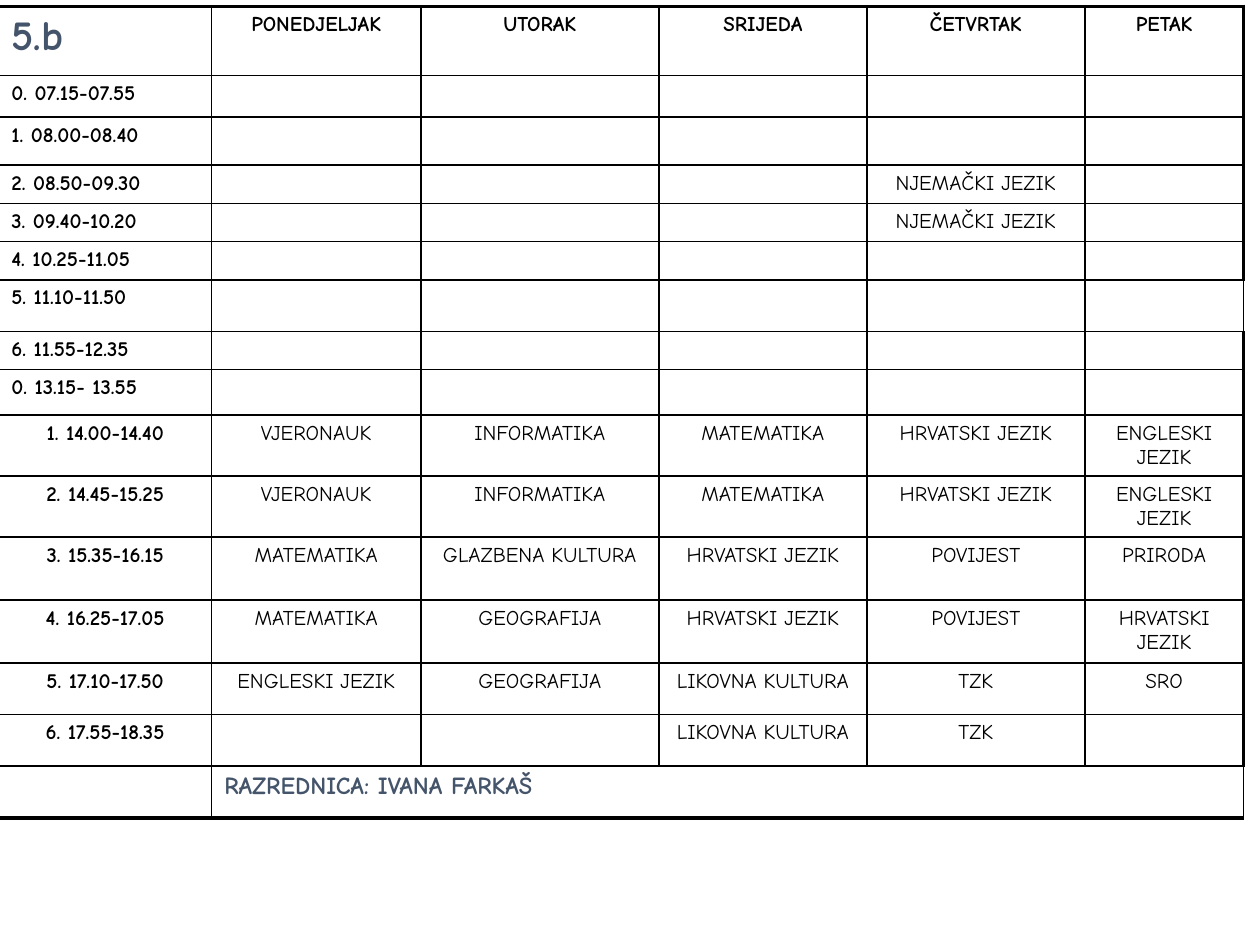
from lxml import etree
from pptx import Presentation
from pptx.dml.color import RGBColor
from pptx.enum.text import PP_ALIGN
from pptx.oxml.ns import qn
from pptx.util import Inches, Pt

LEFT, CENTER = PP_ALIGN.LEFT, PP_ALIGN.CENTER
BLACK = RGBColor(0x00, 0x00, 0x00)
SLATE = RGBColor(0x44, 0x54, 0x6A)
FONT = "Comic Neue"
THIN, THICK = 1, 2.25

CLASS_NAME = "5.b"
DAYS = ["PONEDJELJAK", "UTORAK", "SRIJEDA", "ČETVRTAK", "PETAK"]
FREE_DAY = [""] * 5
MORNING = [
    ("0. 07.15-07.55", FREE_DAY),
    ("1. 08.00-08.40", FREE_DAY),
    ("2. 08.50-09.30", ["", "", "", "NJEMAČKI JEZIK", ""]),
    ("3. 09.40-10.20", ["", "", "", "NJEMAČKI JEZIK", ""]),
    ("4. 10.25-11.05", FREE_DAY),
    ("5. 11.10-11.50", FREE_DAY),
    ("6. 11.55-12.35", FREE_DAY),
    ("0. 13.15- 13.55", FREE_DAY),
]
AFTERNOON = [
    ("1. 14.00-14.40", ["VJERONAUK", "INFORMATIKA", "MATEMATIKA", "HRVATSKI JEZIK", "ENGLESKI JEZIK"]),
    ("2. 14.45-15.25", ["VJERONAUK", "INFORMATIKA", "MATEMATIKA", "HRVATSKI JEZIK", "ENGLESKI JEZIK"]),
    ("3. 15.35-16.15", ["MATEMATIKA", "GLAZBENA KULTURA", "HRVATSKI JEZIK", "POVIJEST", "PRIRODA"]),
    ("4. 16.25-17.05", ["MATEMATIKA", "GEOGRAFIJA", "HRVATSKI JEZIK", "POVIJEST", "HRVATSKI JEZIK"]),
    ("5. 17.10-17.50", ["ENGLESKI JEZIK", "GEOGRAFIJA", "LIKOVNA KULTURA", "TZK", "SRO"]),
    ("6. 17.55-18.35", ["", "", "LIKOVNA KULTURA", "TZK", ""]),
]
CLASS_TEACHER = "RAZREDNICA: IVANA FARKAŠ"

COLUMN_WIDTHS = [1.69, 1.66, 1.89, 1.65, 1.73, 1.26]
ROW_HEIGHTS = [0.55, 0.33, 0.38, 0.29, 0.29, 0.29, 0.41, 0.29, 0.36,
               0.48, 0.48, 0.5, 0.5, 0.41, 0.41, 0.41]
LAST_ROW, LAST_COLUMN = len(ROW_HEIGHTS) - 1, len(COLUMN_WIDTHS) - 1
THIN_EDGE_ROW = 6


def write(cell, text, size=12, color=BLACK, bold=False, align=CENTER):
    paragraph = cell.text_frame.paragraphs[0]
    paragraph.alignment = align
    if not text:
        etree.SubElement(paragraph._p, qn("a:endParaRPr"), sz=str(size * 100))
        return
    run = paragraph.add_run()
    run.text = text
    run.font.name = FONT
    run.font.size = Pt(size)
    run.font.bold = bold
    run.font.color.rgb = color


def draw_borders(cell, **widths):
    properties = cell._tc.get_or_add_tcPr()
    for side in "LRTB":
        line = etree.SubElement(properties, qn(f"a:ln{side}"), w=str(Pt(widths[side])))
        fill = etree.SubElement(line, qn("a:solidFill"))
        etree.SubElement(fill, qn("a:srgbClr"), val=str(BLACK))


def main():
    deck = Presentation()
    deck.slide_width, deck.slide_height = Inches(10), Inches(7.5)
    slide = deck.slides.add_slide(deck.slide_layouts[6])
    timetable = slide.shapes.add_table(
        len(ROW_HEIGHTS), len(COLUMN_WIDTHS), Inches(-0.01), Inches(0.05),
        Inches(sum(COLUMN_WIDTHS)), Inches(sum(ROW_HEIGHTS))).table
    timetable.first_row = timetable.horz_banding = False
    for column, width in zip(timetable.columns, COLUMN_WIDTHS):
        column.width = Inches(width)
    for row, height in zip(timetable.rows, ROW_HEIGHTS):
        row.height = Inches(height)

    for r, row in enumerate(timetable.rows):
        for c, cell in enumerate(row.cells):
            right_edge = c == LAST_COLUMN and r != THIN_EDGE_ROW
            draw_borders(cell,
                         L=THIN if c else THICK,
                         R=THICK if right_edge else THIN,
                         T=THIN if r else THICK,
                         B=THICK if r == LAST_ROW else THIN)
            cell.fill.background()

    write(timetable.cell(0, 0), CLASS_NAME, size=24, color=SLATE, bold=True, align=LEFT)
    for c, day in enumerate(DAYS, 1):
        write(timetable.cell(0, c), day, bold=True)
    for r, (period, subjects) in enumerate(MORNING + AFTERNOON, 1):
        write(timetable.cell(r, 0), period, bold=True,
              align=LEFT if r <= len(MORNING) else CENTER)
        for c, subject in enumerate(subjects, 1):
            write(timetable.cell(r, c), subject)

    teacher = timetable.cell(LAST_ROW, 1)
    teacher.merge(timetable.cell(LAST_ROW, LAST_COLUMN))
    write(timetable.cell(LAST_ROW, 0), "")
    write(teacher, CLASS_TEACHER, size=14, color=SLATE, bold=True, align=LEFT)
    deck.save("out.pptx")


if __name__ == "__main__":
    main()
